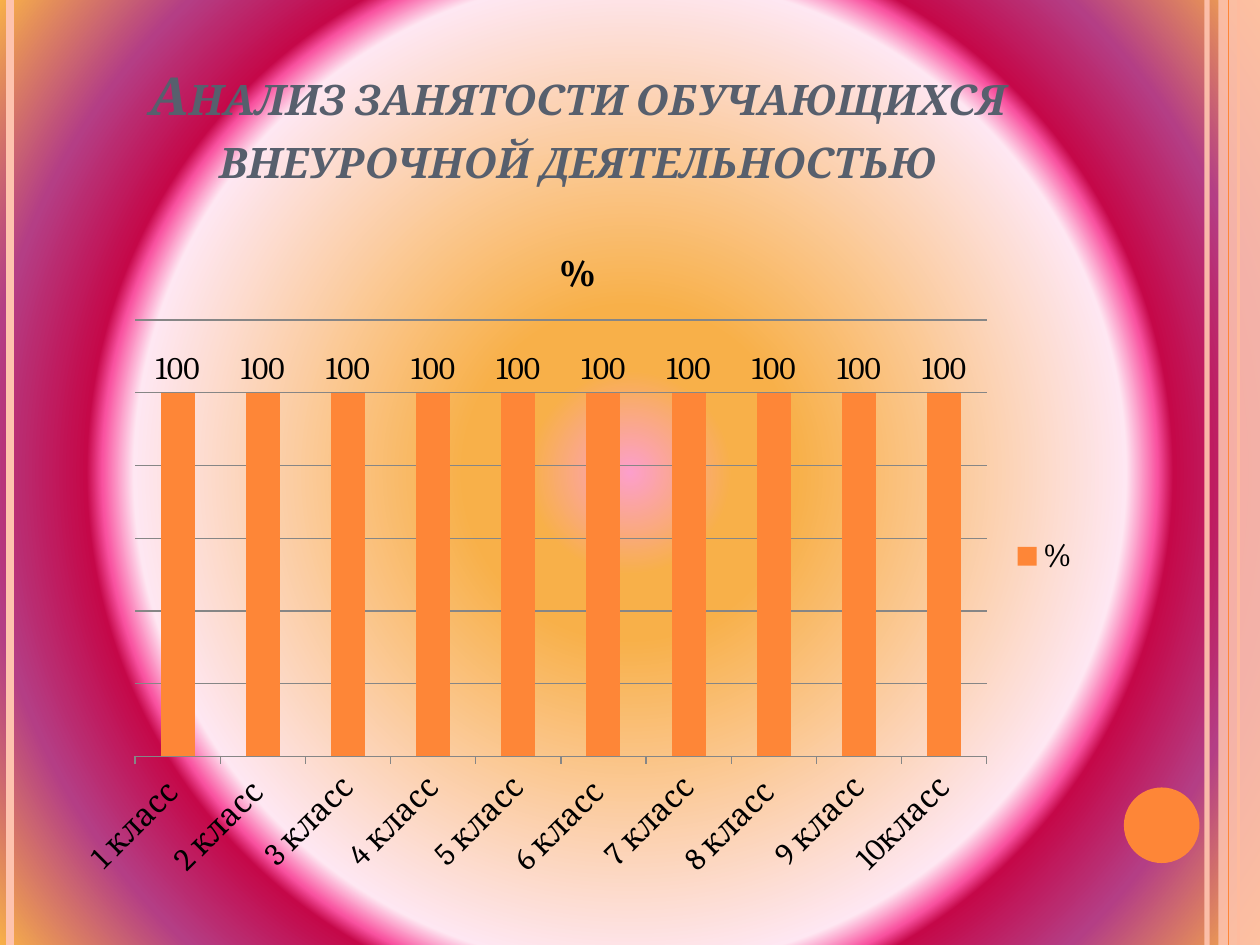
from lxml import etree
from pptx import Presentation
from pptx.chart.data import CategoryChartData
from pptx.dml.color import RGBColor
from pptx.enum import chart as charts, shapes, text
from pptx.oxml.ns import qn
from pptx.util import Inches, Pt

FONT = "Cambria"
ORANGE, PEACH, SLATE, GREY, BLACK = "FE8637", "FEC3AE", "575F6D", "868686", "000000"
BACKGROUND_STOPS = [
    (0, "FC9FCB"), (13, "F8B049"), (21, "F8B049"), (63, "FEE7F2"),
    (67, "F952A0"), (69, "C50849"), (82, "B43E85"), (100, "F8B049"),
]


def paint(color_format, color):
    color_format.rgb = RGBColor.from_string(color)


def add_child(parent, tag, **attributes):
    return etree.SubElement(parent, qn(tag), attributes)


def set_opacity(shape, percent):
    color = next(shape._element.spPr.iter(qn("a:srgbClr")))
    add_child(color, "a:alpha", val=str(percent * 1000))


def style_font(font, size, color, bold=False):
    font.name, font.size, font.bold = FONT, Pt(size), bold
    paint(font.color, color)


def fill_background(slide):
    """Circular gradient spreading from the slide centre."""
    fill = slide.background.fill
    fill.gradient()
    gradient = next(slide.element.iter(qn("a:gradFill")))
    for child in list(gradient):
        gradient.remove(child)
    stops = add_child(gradient, "a:gsLst")
    for position, color in BACKGROUND_STOPS:
        stop = add_child(stops, "a:gs", pos=str(position * 1000))
        add_child(stop, "a:srgbClr", val=color)
    circle = add_child(gradient, "a:path", path="circle")
    add_child(circle, "a:fillToRect", l="50000", t="50000", r="50000", b="50000")


def add_stripe(slide, x, height, color, width):
    stripe = slide.shapes.add_connector(
        shapes.MSO_CONNECTOR.STRAIGHT, Inches(x), 0, Inches(x), Inches(height))
    paint(stripe.line.color, color)
    stripe.line.width = Pt(width)
    add_child(stripe._element.spPr, "a:effectLst")
    return stripe


def add_solid(slide, kind, left, top, width, height, color):
    solid = slide.shapes.add_shape(
        kind, Inches(left), Inches(top), Inches(width), Inches(height))
    solid.shadow.inherit = False
    solid.fill.solid()
    paint(solid.fill.fore_color, color)
    solid.line.fill.background()
    return solid


def add_frame(slide, width, height):
    """Edge stripes, right band and corner dot."""
    set_opacity(add_stripe(slide, width - 0.42, height, PEACH, 3), 93)
    add_stripe(slide, 0.08, height, PEACH, 4.5)
    add_stripe(slide, width - 0.17, height, ORANGE, 1.5)
    band = add_solid(slide, shapes.MSO_SHAPE.RECTANGLE,
                     width - 0.33, 0, 0.33, height, PEACH)
    set_opacity(band, 87)
    add_stripe(slide, width - 0.25, height, ORANGE, 0.75)
    add_solid(slide, shapes.MSO_SHAPE.OVAL,
              width - 1.08, height - 1.25, 0.6, 0.6, ORANGE)


def add_title(slide, left, top, width, height):
    title = slide.shapes.title
    title.left, title.top = Inches(left), Inches(top)
    title.width, title.height = Inches(width), Inches(height)
    frame = title.text_frame
    frame.text = "Анализ занятости обучающихся внеурочной деятельностью"
    frame.word_wrap = True
    frame.auto_size = text.MSO_AUTO_SIZE.NONE
    frame.vertical_anchor = text.MSO_ANCHOR.BOTTOM
    heading = frame.paragraphs[0]
    heading.alignment = text.PP_ALIGN.CENTER
    heading.line_spacing = 1.0
    run = heading.runs[0]
    style_font(run.font, 30, SLATE, bold=True)
    run.font.italic = True
    run.font._element.set("cap", "small")


def add_attendance_chart(slide, left, top, width, height):
    data = CategoryChartData()
    data.categories = ["1 класс ", "2 класс ", "3 класс", "4 класс", "5 класс",
                       "6 класс ", "7 класс", "8 класс ", "9 класс", "10класс"]
    data.add_series("%", [100] * 10)
    chart = slide.shapes.add_chart(
        charts.XL_CHART_TYPE.COLUMN_CLUSTERED,
        Inches(left), Inches(top), Inches(width), Inches(height), data).chart
    style_font(chart.font, 18, BLACK)

    # Title and legend
    chart.has_title = True
    heading = chart.chart_title.text_frame
    heading.text = "%"
    style_font(heading.paragraphs[0].runs[0].font, 21.6, BLACK, bold=True)
    chart.chart_title.include_in_layout = False
    chart.has_legend = True
    chart.legend.position = charts.XL_LEGEND_POSITION.RIGHT
    chart.legend.include_in_layout = False

    # Axes
    grades = chart.category_axis
    grades.major_tick_mark = charts.XL_TICK_MARK.OUTSIDE
    percent = chart.value_axis
    percent.minimum_scale, percent.maximum_scale, percent.major_unit = 0, 120, 20
    percent.has_major_gridlines = True
    percent.visible = False
    for line in (grades.format.line, percent.major_gridlines.format.line):
        paint(line.color, GREY)
        line.width = Pt(0.75)

    # Columns and their labels
    plot = chart.plots[0]
    plot.vary_by_categories = False
    plot.gap_width, plot.overlap = 150, 0
    columns = plot.series[0]
    columns.format.fill.solid()
    paint(columns.format.fill.fore_color, ORANGE)
    labels = columns.data_labels
    labels.show_value = True
    labels.position = charts.XL_LABEL_POSITION.OUTSIDE_END
    style_font(labels.font, 18, BLACK)


def main():
    width, height = 10, 7.5
    deck = Presentation()
    deck.slide_width, deck.slide_height = Inches(width), Inches(height)
    slide = deck.slides.add_slide(deck.slide_layouts[5])
    fill_background(slide)
    add_frame(slide, width, height)
    add_title(slide, 0.5, 0.3, 8.17, 1.25)
    add_attendance_chart(slide, 0.5, 1.75, 8.17, 5.33)
    deck.save("out.pptx")


if __name__ == "__main__":
    main()
